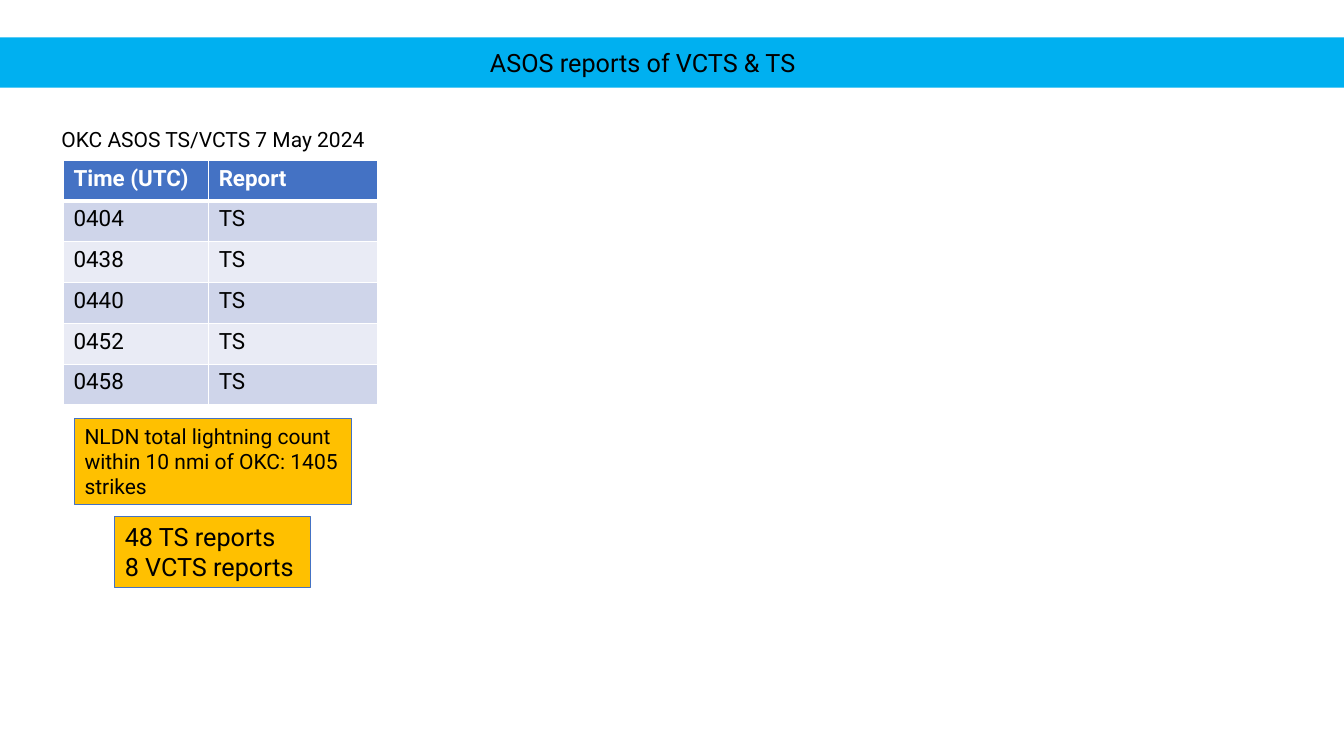
from lxml import etree
from pptx import Presentation, util as u
from pptx.dml.color import RGBColor
from pptx.enum import shapes, text
from pptx.oxml import ns

BLACK = RGBColor(0, 0, 0)
WHITE = RGBColor(255, 255, 255)
SKY = RGBColor(0x00, 0xB0, 0xF0)
AMBER = RGBColor(0xFF, 0xC0, 0x00)
BLUE = RGBColor(0x44, 0x72, 0xC4)
BANDS = (RGBColor(0xCF, 0xD5, 0xEA), RGBColor(0xE9, 0xEB, 0xF5))


class Board:
    """Draws on one slide; lengths are percentages of its width and height."""

    font = "Roboto"

    def __init__(self, deck):
        self.width, self.height = deck.slide_width, deck.slide_height
        self.shapes = deck.slides.add_slide(deck.slide_layouts[6]).shapes

    def place(self, left, top, width, height):
        return (int(left * self.width / 100), int(top * self.height / 100),
                int(width * self.width / 100), int(height * self.height / 100))

    def set_words(self, frame, words, size, color=BLACK, bold=False, align=text.PP_ALIGN.LEFT):
        frame.text = words
        for paragraph in frame.paragraphs:
            paragraph.alignment = align
            for run in paragraph.runs:
                run.font.name, run.font.size = self.font, u.Pt(size)
                run.font.bold, run.font.color.rgb = bold, color

    def fit(self, frame, wrap):
        frame.word_wrap = wrap
        frame.auto_size = text.MSO_AUTO_SIZE.SHAPE_TO_FIT_TEXT
        frame.vertical_anchor = text.MSO_ANCHOR.TOP

    def rectangle(self, area, fill, line=None):
        box = self.shapes.add_shape(shapes.MSO_SHAPE.RECTANGLE, *self.place(*area))
        box.shadow.inherit = False
        box.fill.solid()
        box.fill.fore_color.rgb = fill
        if line is None:
            box.line.fill.background()
        else:
            box.line.color.rgb, box.line.width = line, u.Pt(0.75)
        return box

    def label(self, area, words, size, wrap=True, align=text.PP_ALIGN.LEFT):
        frame = self.shapes.add_textbox(*self.place(*area)).text_frame
        self.set_words(frame, words, size, align=align)
        self.fit(frame, wrap)

    def callout(self, area, words, size, wrap=True):
        frame = self.rectangle(area, AMBER, BLUE).text_frame
        self.set_words(frame, words, size)
        self.fit(frame, wrap)

    def border(self, cell, header_above, header):
        """Adds white cell edges, thick under the header row."""
        widths = {"L": 1, "R": 1, "T": 3 if header_above else 1, "B": 3 if header else 1}
        properties = cell._tc.get_or_add_tcPr()
        for side, points in widths.items():
            edge = etree.SubElement(properties, ns.qn(f"a:ln{side}"), w=str(u.Pt(points)))
            paint = etree.SubElement(edge, ns.qn("a:solidFill"))
            etree.SubElement(paint, ns.qn("a:srgbClr"), val=str(WHITE))

    def table(self, left, top, column_widths, row_height, rows):
        area = self.place(left, top, sum(column_widths), row_height * len(rows))
        grid = self.shapes.add_table(len(rows), len(column_widths), *area).table
        for column, share in zip(grid.columns, column_widths):
            column.width = int(share * self.width / 100)
        for r, row in enumerate(rows):
            header = r == 0
            for c, words in enumerate(row):
                cell = grid.cell(r, c)
                self.set_words(cell.text_frame, words, 16, WHITE if header else BLACK, header)
                self.border(cell, r == 1, header)
                cell.fill.solid()
                cell.fill.fore_color.rgb = BLUE if header else BANDS[(r - 1) % 2]


def main():
    deck = Presentation()
    deck.slide_width, deck.slide_height = u.Inches(13.33), u.Inches(7.5)
    board = Board(deck)

    board.rectangle((0, 4.93, 100, 6.67), SKY)
    board.label((34.28, 5.6, 27.08, 5.33), "ASOS reports of VCTS & TS", 18,
                align=text.PP_ALIGN.CENTER)

    times = ("0404", "0438", "0440", "0452", "0458")
    reports = [("Time (UTC)", "Report")] + [(time, "TS") for time in times]
    board.table(4.73, 21.2, (10.8, 12.6), 5.4, reports)
    board.label((3.83, 16.13, 25.43, 4.67), "OKC ASOS TS/VCTS 7 May 2024", 15, wrap=False)

    board.callout((5.55, 55.33, 20.63, 11.47),
                  "NLDN total lightning count within 10 nmi of OKC: 1405 strikes", 15)
    board.callout((8.55, 68.27, 14.55, 9.47), "48 TS reports\n8 VCTS reports", 18, wrap=False)

    deck.save("out.pptx")


if __name__ == "__main__":
    main()
